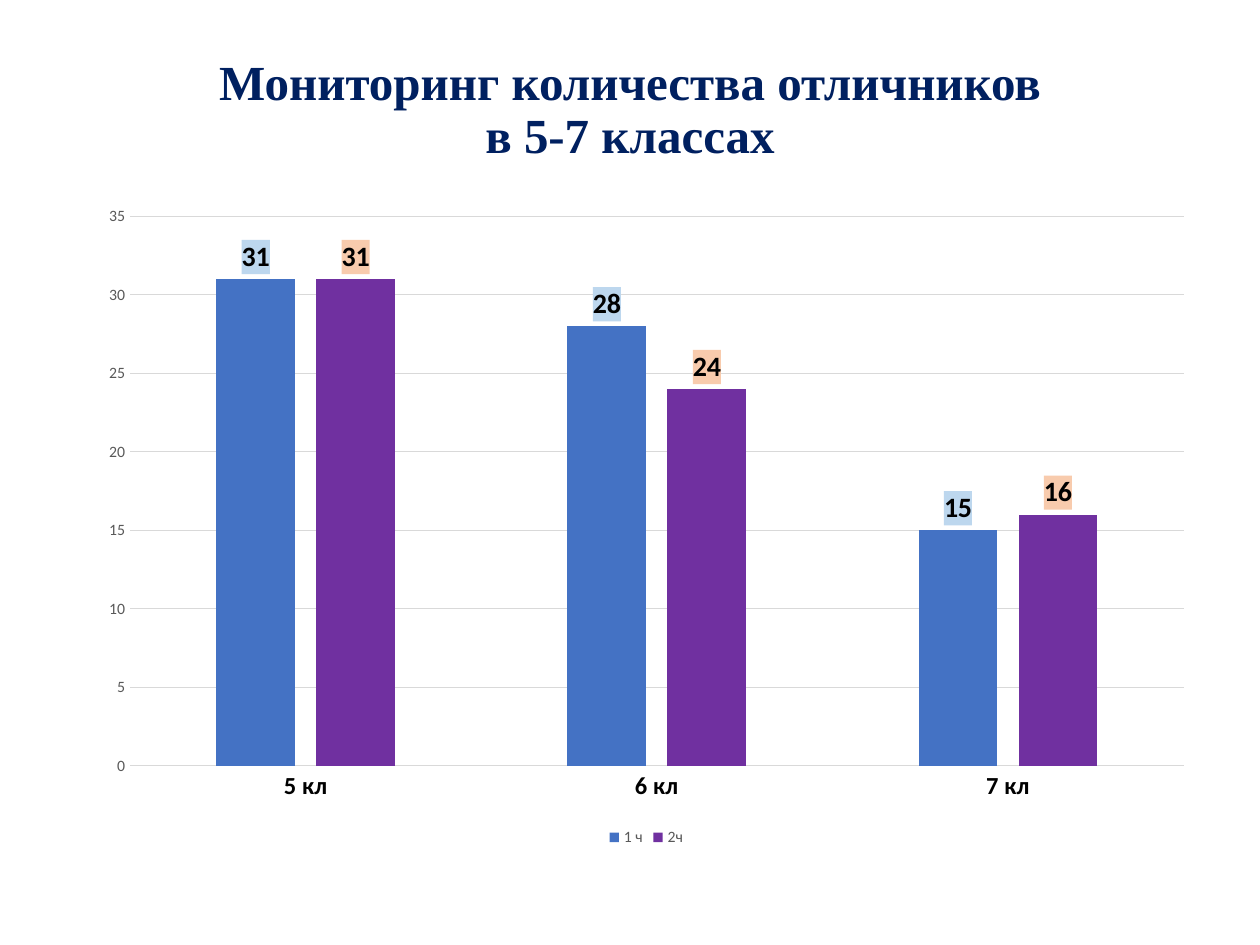
from lxml import etree
from pptx import Presentation
from pptx.chart.data import CategoryChartData
from pptx.dml.color import RGBColor
from pptx.enum.chart import XL_CHART_TYPE, XL_LABEL_POSITION as LABEL_POS
from pptx.enum.chart import XL_LEGEND_POSITION as LEGEND_POS, XL_TICK_MARK as TICK
from pptx.enum.text import MSO_ANCHOR, PP_ALIGN
from pptx.oxml import parse_xml
from pptx.oxml.ns import nsdecls, qn
from pptx.util import Cm, Pt


def rgb(value):
    return RGBColor.from_string(value)


def set_font(font, size, color, bold=False, name="Calibri"):
    font.name, font.size, font.bold = name, Pt(size), bold
    font.color.rgb = rgb(color)


prs = Presentation()
prs.slide_width, prs.slide_height = Cm(25.4), Cm(19.05)
s = prs.slides.add_slide(prs.slide_layouts[6])

# Title
tf = s.shapes.add_textbox(Cm(1.75), Cm(1.02), Cm(21.9), Cm(2.44)).text_frame
tf.word_wrap = True
tf.vertical_anchor = MSO_ANCHOR.MIDDLE
p = tf.paragraphs[0]
p.text = "Мониторинг количества отличников\vв 5-7 классах"
p.alignment = PP_ALIGN.CENTER
p.line_spacing = 0.9
set_font(p.font, 28, "002060", True, "Times New Roman")

# Chart: name, values, bar colour, label background
series_rows = [
    ("1 ч", (31, 28, 15), "4472C4", "BDD7EE"),
    ("2ч", (31, 24, 16), "7030A0", "F8CBAD"),
]
data = CategoryChartData()
data.categories = ["5 кл", "6 кл", "7 кл"]
for name, values, _, _ in series_rows:
    data.add_series(name, values)
chart = s.shapes.add_chart(XL_CHART_TYPE.COLUMN_CLUSTERED, Cm(1.75), Cm(3.91),
                           Cm(22.56), Cm(13.26), data).chart
chart.has_title = False
set_font(chart.font, 10, "000000")
chart.has_legend = True
chart.legend.position = LEGEND_POS.BOTTOM
chart.legend.include_in_layout = False
set_font(chart.legend.font, 9, "595959")

plot = chart.plots[0]
plot.gap_width, plot.overlap = 219, -27
plot.vary_by_categories = False
for ser, (_, _, color, label_fill) in zip(plot.series, series_rows):
    ser.format.fill.solid()
    ser.format.fill.fore_color.rgb = rgb(color)
    labels = ser.data_labels
    labels.show_value = True
    labels.position = LABEL_POS.OUTSIDE_END
    set_font(labels.font, 16, "000000", True)
    sp_pr = parse_xml(f'<c:spPr {nsdecls("c", "a")}/>')
    fill = etree.SubElement(sp_pr, qn("a:solidFill"))
    etree.SubElement(fill, qn("a:srgbClr"), val=label_fill)
    ser._element.find(f'{qn("c:dLbls")}/{qn("c:txPr")}').addprevious(sp_pr)

cat_axis, val_axis = chart.category_axis, chart.value_axis
for axis in (cat_axis, val_axis):
    axis.major_tick_mark = axis.minor_tick_mark = TICK.NONE
set_font(cat_axis.tick_labels.font, 14, "000000", True)
set_font(val_axis.tick_labels.font, 9, "595959")
val_axis.minimum_scale, val_axis.maximum_scale, val_axis.major_unit = 0, 35, 5
val_axis.format.line.fill.background()
for line in (cat_axis.format.line, val_axis.major_gridlines.format.line):
    line.color.rgb = rgb("D9D9D9")
    line.width = Pt(0.75)

prs.save("out.pptx")
